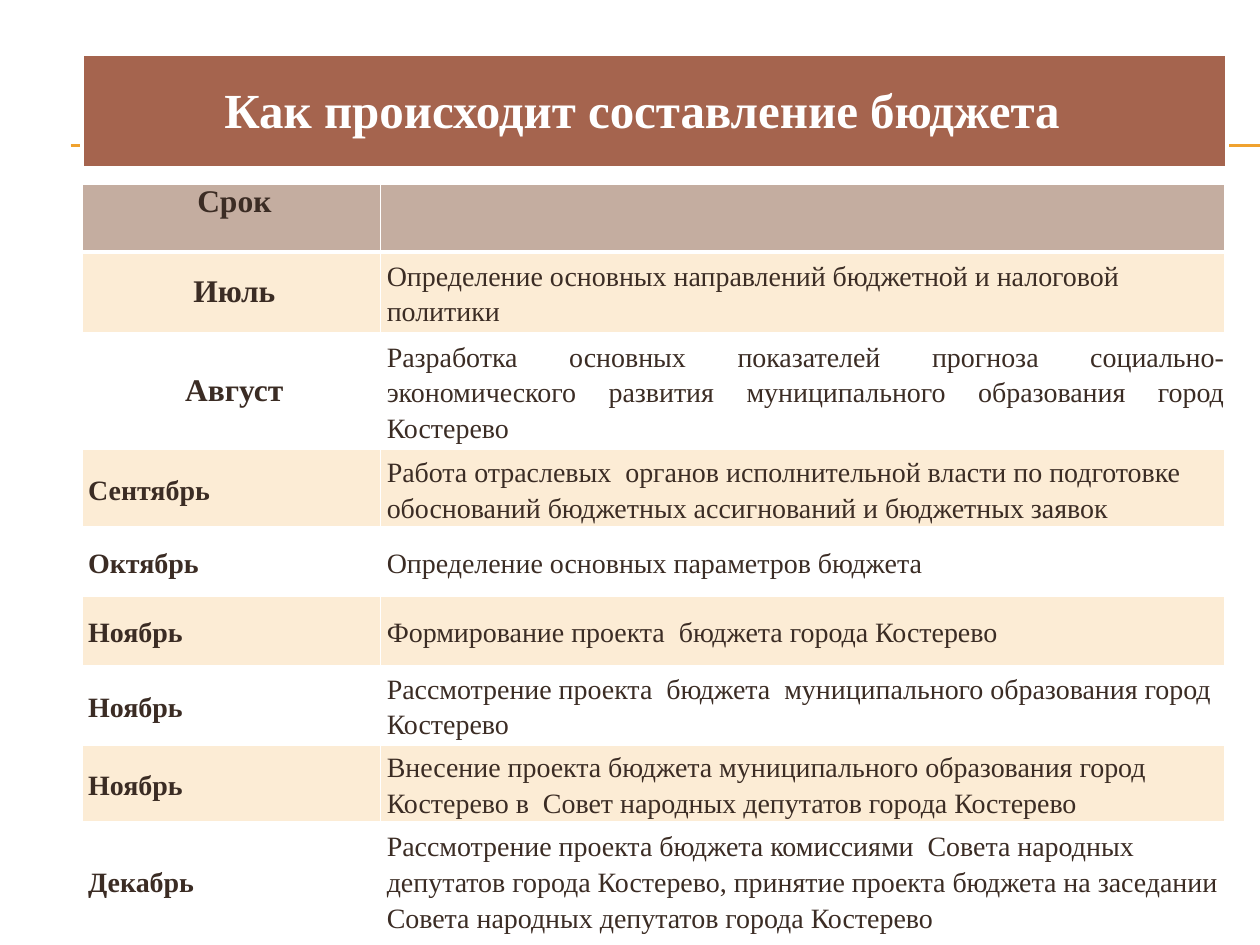
"""Build a slide with the timetable for drafting the city budget."""
from lxml import etree
from pptx import Presentation
from pptx.dml.color import RGBColor
from pptx.enum import shapes, text
from pptx.oxml import ns
from pptx.util import Inches, Pt

FONT = "Times New Roman"
WHITE, BROWN, GOLD, DARK = "FFFFFF", "A5644E", "F0A22E", "3B2C24"
HEADER, BAND = "C4ADA0", "FCECD5"
LEFT, CENTER, JUSTIFY = text.PP_ALIGN.LEFT, text.PP_ALIGN.CENTER, text.PP_ALIGN.JUSTIFY


def paint(color_format, value):
    color_format.rgb = RGBColor.from_string(value)


def add_border(cell, side, points):
    properties = cell._tc.get_or_add_tcPr()
    line = etree.SubElement(properties, ns.qn(f"a:ln{side}"), w=str(Pt(points)))
    fill = etree.SubElement(line, ns.qn("a:solidFill"))
    etree.SubElement(fill, ns.qn("a:srgbClr"), val=WHITE)


presentation = Presentation()
presentation.slide_width, presentation.slide_height = Inches(10), Inches(7.5)
slide = presentation.slides.add_slide(presentation.slide_layouts[6])

for y in (1.15, 1.16):
    rule = slide.shapes.add_connector(
        shapes.MSO_CONNECTOR.STRAIGHT, Inches(0.56), Inches(y), Inches(10), Inches(y))
    paint(rule.line.color, GOLD)
    rule.line.width = Pt(0.75)
    etree.SubElement(rule._element.spPr, ns.qn("a:effectLst"))

banner = slide.shapes.add_shape(
    shapes.MSO_SHAPE.RECTANGLE, Inches(0.65), Inches(0.43), Inches(9.09), Inches(0.9))
banner.shadow.inherit = False
banner.fill.solid()
paint(banner.fill.fore_color, BROWN)
paint(banner.line.color, WHITE)
banner.line.width = Pt(2)

title = slide.shapes.add_textbox(Inches(0.9), Inches(0.63), Inches(8.69), Inches(0.47))
frame = title.text_frame
frame.word_wrap = True
frame.margin_left = Inches(0.88)
frame.margin_right = frame.margin_top = frame.margin_bottom = 0
paragraph = frame.paragraphs[0]
paragraph.text = "Как происходит составление бюджета"
paragraph.font.name, paragraph.font.size, paragraph.font.bold = FONT, Pt(28), True
paint(paragraph.font.color, WHITE)

stages = [
    (0.54, "Срок", ""),
    (0.64, "Июль", "Определение основных направлений бюджетной и налоговой политики"),
    (0.93, "Август", "Разработка основных показателей прогноза социально-экономического "
                     "развития муниципального образования город Костерево"),
    (0.6, "Сентябрь", "Работа отраслевых  органов исполнительной власти по подготовке "
                      "обоснований бюджетных ассигнований и бюджетных заявок"),
    (0.55, "Октябрь", "Определение основных параметров бюджета"),
    (0.55, "Ноябрь", "Формирование проекта  бюджета города Костерево"),
    (0.63, "Ноябрь", "Рассмотрение проекта  бюджета  муниципального образования город Костерево"),
    (0.6, "Ноябрь", "Внесение проекта бюджета муниципального образования город Костерево "
                    "в  Совет народных депутатов города Костерево"),
    (0.93, "Декабрь", "Рассмотрение проекта бюджета комиссиями  Совета народных депутатов "
                      "города Костерево, принятие проекта бюджета на заседании "
                      "Совета народных депутатов города Костерево"),
]
table = slide.shapes.add_table(
    len(stages), 2, Inches(0.65), Inches(1.46), Inches(9.07), Inches(5.97)).table
table.columns[0].width, table.columns[1].width = Inches(2.37), Inches(6.7)

for row, (height, *words) in enumerate(stages):
    table.rows[row].height = Inches(height)
    for column, content in enumerate(words):
        cell = table.cell(row, column)
        cell.margin_left = Inches(0.05)
        cell.margin_right = cell.margin_top = cell.margin_bottom = 0
        cell.vertical_anchor = text.MSO_ANCHOR.MIDDLE if row else text.MSO_ANCHOR.TOP
        for side in "LRTB":
            thick = (row, side) in ((0, "B"), (1, "T"))
            add_border(cell, side, 3 if thick else 1)
        cell.fill.solid()
        paint(cell.fill.fore_color, HEADER if row == 0 else BAND if row % 2 else WHITE)

        large = column == 0 and row < 3
        paragraph = cell.text_frame.paragraphs[0]
        paragraph.text = content
        paragraph.alignment = CENTER if large else JUSTIFY if (row, column) == (2, 1) else LEFT
        paragraph.line_spacing = 1.0 if large else 1.15
        paragraph.font.name = FONT
        paragraph.font.size = Pt(18 if large else 16)
        paragraph.font.bold = column == 0
        paint(paragraph.font.color, DARK)

presentation.save("out.pptx")
